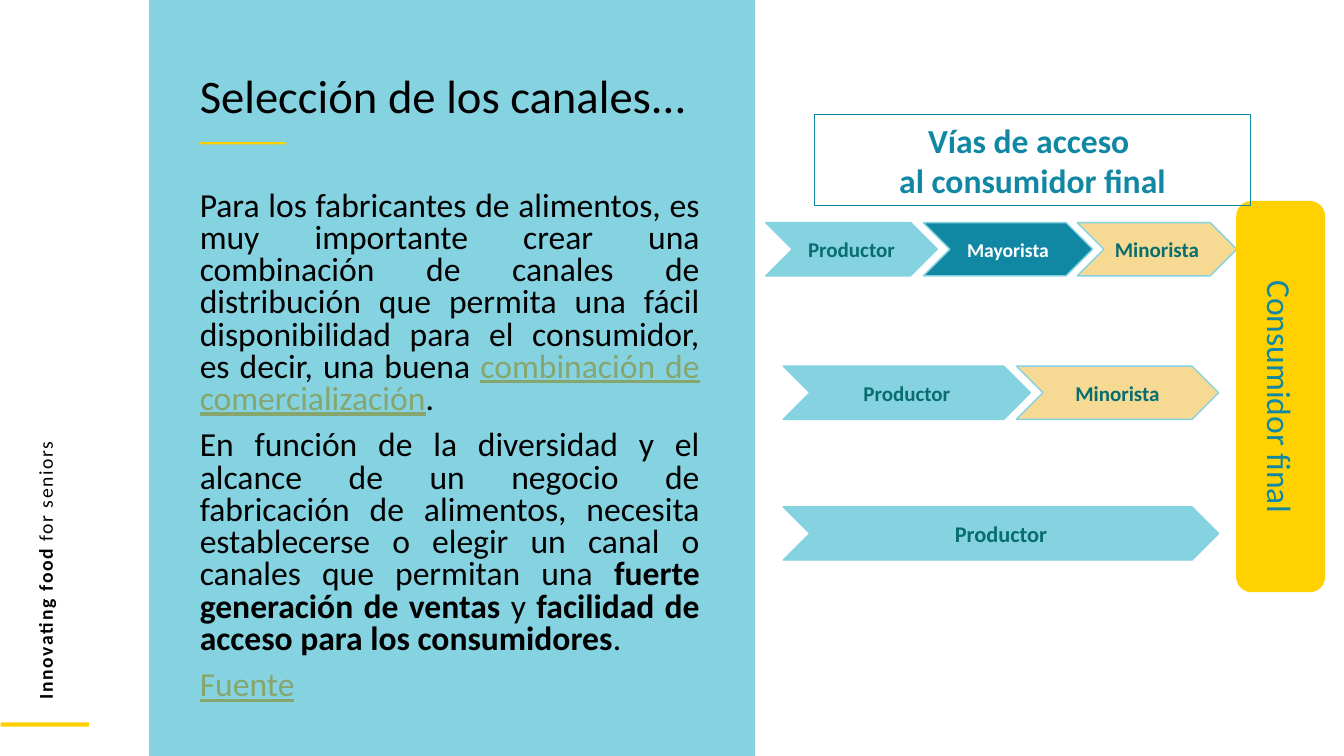
import pptx
import pptx.dml.color
import pptx.enum.shapes
import pptx.enum.text
import pptx.oxml
import pptx.util

Pt = pptx.util.Pt
SHAPE = pptx.enum.shapes.MSO_SHAPE
ALIGN = pptx.enum.text.PP_ALIGN
ANCHOR = pptx.enum.text.MSO_ANCHOR
AUTO = pptx.enum.text.MSO_AUTO_SIZE

FONT = "Calibri"
BLACK, WHITE = "000000", "FFFFFF"
SKY, TEAL, DARK_TEAL = "85D2E1", "1188A3", "086D6E"
YELLOW, SAND, LINK = "FFD100", "F6D992", "87A66E"

BODY = [
    [("Para los fabricantes de alimentos, es muy importante crear una combinación "
      "de canales de distribución que permita una fácil disponibilidad para el "
      "consumidor, es decir, una buena ", ""),
     ("combinación de comercialización", "link"), (". ", "")],
    [("En función de la diversidad y el alcance de un negocio de fabricación de "
      "alimentos, necesita establecerse o elegir un canal o canales que permitan "
      "una ", ""),
     ("fuerte generación de ventas", "bold"), (" y ", ""),
     ("facilidad de acceso para los consumidores", "bold"), (". ", "")],
    [("Fuente", "link")],
]

# Each channel: top, then (label, left, width, text size, fill, text colour)
CHANNELS = [
    (159, [("Productor", 547, 122.5, 15, SKY, DARK_TEAL),
           ("Mayorista", 659.5, 121, 14, TEAL, WHITE),
           ("Minorista", 769.5, 114, 15, SAND, DARK_TEAL)]),
    (261.5, [("Productor", 559.5, 176.5, 15, SKY, DARK_TEAL),
             ("Minorista", 726, 144.5, 15, SAND, DARK_TEAL)]),
    (362, [("Productor", 559.5, 311, 16, SKY, DARK_TEAL)]),
]


def rgb(color):
    return pptx.dml.color.RGBColor.from_string(color)


def style(r, size, color, bold=False):
    r.font.name = FONT
    r.font.size = Pt(size)
    r.font.bold = bold
    r.font.color.rgb = rgb(color)


def place(sp, left, top, width, height):
    sp.left, sp.top, sp.width, sp.height = map(Pt, (left, top, width, height))


def add_block(s, kind, box, fill, line=None):
    sp = s.shapes.add_shape(kind, *map(Pt, box))
    sp.shadow.inherit = False
    sp.fill.solid()
    sp.fill.fore_color.rgb = rgb(fill)
    if line:
        sp.line.color.rgb = rgb(line)
        sp.line.width = Pt(1)
    else:
        sp.line.fill.background()
    return sp


def set_label(sp, text, size, color, bold=True):
    tf = sp.text_frame
    tf.word_wrap = True
    tf.vertical_anchor = ANCHOR.MIDDLE
    tf.text = text
    for p in tf.paragraphs:
        p.alignment = ALIGN.CENTER
        for r in p.runs:
            style(r, size, color, bold)


def add_title(s):
    sp = s.shapes.title
    place(sp, 135.5, 47, 371.5, 46)
    tf = sp.text_frame
    tf.text = "Selección de los canales..."
    tf.auto_size = AUTO.NONE
    p = tf.paragraphs[0]
    p.alignment = ALIGN.LEFT
    p.line_spacing = 0.9
    style(p.runs[0], 33.3, BLACK)


def add_body(s):
    sp = s.placeholders[1]
    place(sp, 135.5, 133, 371.5, 385)
    tf = sp.text_frame
    tf.auto_size = AUTO.NONE
    for i, pieces in enumerate(BODY):
        p = tf.add_paragraph() if i else tf.paragraphs[0]
        p.alignment = ALIGN.JUSTIFY if len(pieces) > 1 else ALIGN.LEFT
        p.line_spacing = 0.8
        p.space_before = Pt(10 if i else 0)
        pPr = p._p.get_or_add_pPr()
        pPr.set("marL", "0")
        pPr.set("indent", "0")
        pptx.oxml.xmlchemy.OxmlElement
        pPr.append(pptx.oxml.xmlchemy.OxmlElement("a:buNone"))
        for text, look in pieces:
            r = p.add_run()
            r.text = text
            style(r, 24, LINK if look == "link" else BLACK, look == "bold")
            r.font.underline = look == "link"


def add_side_motto(s):
    sp = s.shapes.add_textbox(Pt(-183.5), Pt(278.5), Pt(432), Pt(24.5))
    sp.rotation = 270
    tf = sp.text_frame
    tf.word_wrap = True
    for text, bold in (("Innovating food ", True), ("for seniors", False)):
        r = tf.paragraphs[0].add_run()
        r.text = text
        style(r, 14, BLACK, bold)
        r.font._rPr.set("spc", "110")


def add_heading(s):
    sp = s.shapes.add_textbox(Pt(582), Pt(81.5), Pt(311), Pt(65.5))
    sp.line.color.rgb = rgb(TEAL)
    sp.line.width = Pt(0.75)
    set_label(sp, "Vías de acceso \nal consumidor final", 24, TEAL)


def add_consumer(s):
    sp = add_block(s, SHAPE.ROUNDED_RECTANGLE, (883.5, 144, 62.5, 278.5), YELLOW, YELLOW)
    set_label(sp, "Consumidor final", 24, TEAL, bold=False)
    sp.text_frame._txBody.bodyPr.set("vert", "vert")


def main():
    prs = pptx.Presentation()
    prs.slide_width, prs.slide_height = Pt(960), Pt(540)
    s = prs.slides.add_slide(prs.slide_layouts[1])
    panel = add_block(s, SHAPE.RECTANGLE, (106.5, 0, 433, 540), SKY)
    s.shapes._spTree.insert(2, panel._element)
    add_block(s, SHAPE.RECTANGLE, (0.5, 516, 63, 3), YELLOW)
    add_block(s, SHAPE.RECTANGLE, (142, 101.5, 62.5, 1.75), YELLOW)
    add_side_motto(s)
    add_title(s)
    add_body(s)
    for top, steps in CHANNELS:
        for text, left, width, size, fill, color in steps:
            sp = add_block(s, SHAPE.CHEVRON, (left, top, width, 38), fill, SKY)
            set_label(sp, text, size, color)
    add_consumer(s)
    add_heading(s)
    prs.save("out.pptx")


if __name__ == "__main__":
    main()
